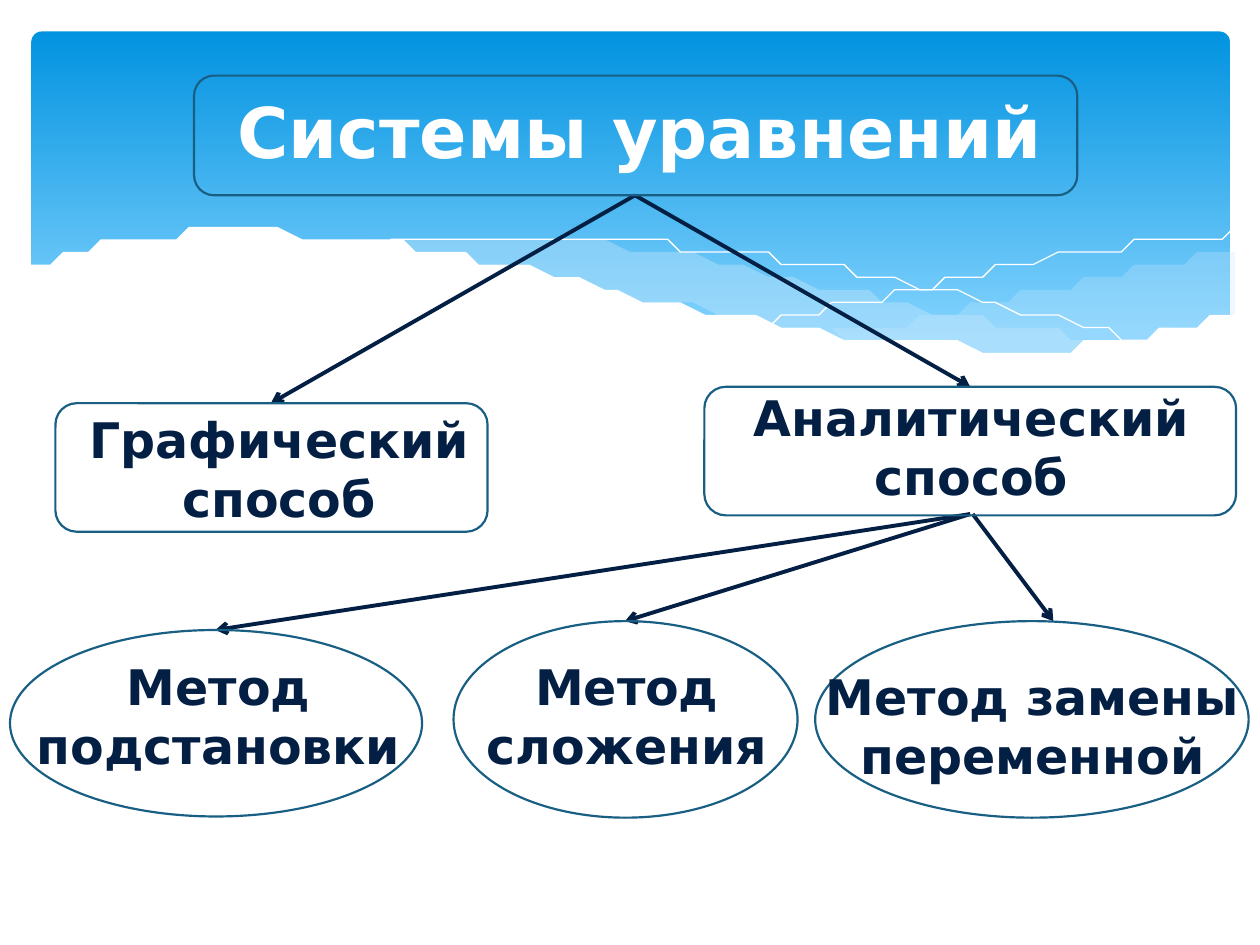
from dataclasses import dataclass

from lxml import etree
from pptx import Presentation
from pptx.dml.color import RGBColor
from pptx.enum.shapes import MSO_CONNECTOR, MSO_SHAPE
from pptx.enum.text import MSO_ANCHOR, MSO_AUTO_SIZE, PP_ALIGN
from pptx.oxml.ns import qn
from pptx.util import Emu, Inches, Pt

ROUNDED, ELLIPSE = MSO_SHAPE.ROUNDED_RECTANGLE, MSO_SHAPE.OVAL
STRAIGHT = MSO_CONNECTOR.STRAIGHT
CENTER, TOP = PP_ALIGN.CENTER, MSO_ANCHOR.TOP
FIT_SHAPE = MSO_AUTO_SIZE.SHAPE_TO_FIT_TEXT

COLORS = {"sky": "0293E0", "light sky": "83D3FE", "veil": "C6E7FC",
          "white": "FFFFFF", "ink": "041F44", "outline": "195F84"}
FONT = "DejaVu Sans"
WIDTH, HEIGHT = Inches(10), Inches(7.5)
COLUMNS, ROWS = 100, 75  # grid of square cells
CELL = WIDTH // COLUMNS

Point = tuple[float, float]
Area = tuple[float, float, float, float]  # column, row, columns, rows


@dataclass
class Node:
    text: str
    kind: MSO_SHAPE
    outline: Area
    label: Area


@dataclass
class Arrow:
    start: Point
    end: Point


@dataclass
class Veil:
    upper: list[Point]
    lower: list[Point]
    color: str
    opacity: int


VEILS = [
    Veil([(66.1, 26.5), (72.9, 25.3), (79.2, 24), (86.1, 22.3), (92.1, 21), (97.6, 20)],
         [(97.6, 24.7), (92.8, 26.3), (87.2, 27.4), (81.4, 27.8), (74.5, 27.5), (66.1, 26.5)],
         "veil", 29),
    Veil([(28.6, 19.1), (34.4, 18.6), (42, 18.7), (51.4, 19.8), (62.9, 22.2), (74.1, 24.7),
          (83.7, 26.5), (89.3, 27.3)],
         [(89.3, 27.3), (83.8, 27.8), (77.3, 27.7), (69.5, 27), (60.1, 25.5), (49.1, 23.2),
          (38.3, 20.7), (28.6, 19.1)], "veil", 40),
    Veil([(2.3, 21.3), (5.2, 20.1), (10.6, 18.9), (17.7, 18.4), (27.1, 18.8), (36.5, 20.2),
          (47.5, 22.7), (57.9, 25), (68.8, 26.8), (79.3, 27.6), (87.5, 27.3),
          (93, 26.2), (97.7, 24.6)],
         [(97.7, 32.9), (2.3, 32.9)], "white", 100),
]
THREADS = [
    [(30.9, 19.5), (36.3, 18.9), (43.3, 18.7), (51, 19.2), (60.8, 20.4), (69.5, 21.9),
     (79.5, 24.1), (90.7, 27.2)],
    [(61.3, 25.7), (69.5, 23.5), (77.6, 21.6), (86.6, 19.9), (92.4, 19), (97.5, 18.5)],
]
TITLE = Node("Системы уравнений ", ROUNDED, (15.4, 6, 70.1, 9.5), (16.9, 6.5, 67.7, 7.7))
NODES = [
    Node("Графический способ", ROUNDED, (4.4, 32, 34.3, 10.2), (5.2, 32, 33.9, 10.4)),
    Node("Аналитический способ", ROUNDED, (55.9, 30.7, 42.2, 10.2), (57.8, 30.3, 38.6, 10.4)),
    Node("Метод подстановки", ELLIPSE, (0.8, 50, 32.7, 14.8), (1.2, 51.6, 32.3, 10.4)),
    Node("Метод сложения", ELLIPSE, (36, 49.3, 27.3, 15.6), (37, 51.6, 25.5, 10.4)),
    Node("Метод замены переменной", ELLIPSE, (64.7, 49.3, 34.4, 15.6), (64.1, 52.4, 35.7, 10.4)),
]
ARROWS = [
    Arrow((50.4, 15.5), (21.5, 32)),
    Arrow((50.4, 15.5), (77, 30.7)),
    Arrow((77, 40.8), (17.1, 50)),
    Arrow((77, 40.8), (49.6, 49.3)),
    Arrow((77.2, 40.8), (83.6, 49.3)),
]


def color(name: str) -> RGBColor:
    return RGBColor.from_string(COLORS[name])


def cells(values) -> list[Emu]:
    return [Emu(round(value * CELL)) for value in values]


def smooth(knots: list[Point], steps: int = 6) -> list[Point]:
    """Catmull-Rom curve through the knots."""
    if len(knots) < 3:
        return knots
    padded = [knots[0], *knots, knots[-1]]
    curve = [knots[0]]
    for a, b, c, d in zip(padded, padded[1:], padded[2:], padded[3:]):
        for step in range(1, steps + 1):
            t = step / steps
            curve.append(tuple(
                (2 * q + (r - p) * t + (2 * p - 5 * q + 4 * r - s) * t ** 2
                 + (3 * q - p - 3 * r + s) * t ** 3) / 2
                for p, q, r, s in zip(a, b, c, d)))
    return curve


def draw_path(shapes, points: list[Point], close: bool):
    builder = shapes.build_freeform(*points[0], scale=CELL)
    builder.add_line_segments(points[1:], close=close)
    shape = builder.convert_to_shape()
    shape.shadow.inherit = False
    return shape


def draw_banner(shapes) -> None:
    shape = shapes.add_shape(ROUNDED, *cells((2.5, 2.5, 95.1, 27)))
    shape.shadow.inherit = False
    shape.adjustments[0] = 0.03
    shape.line.fill.background()
    shape.fill.gradient()
    shape.fill.gradient_angle = 270
    stops = zip(shape.fill.gradient_stops, ("sky", "light sky"), (0, 0.9))
    for stop, name, position in stops:
        stop.color.rgb = color(name)
        stop.position = position


def draw_veil(shapes, veil: Veil) -> None:
    shape = draw_path(shapes, smooth(veil.upper) + smooth(veil.lower), True)
    shape.line.fill.background()
    shape.fill.solid()
    shape.fill.fore_color.rgb = color(veil.color)
    if veil.opacity < 100:
        fill_color = shape._element.spPr.find(qn("a:solidFill"))[0]
        etree.SubElement(fill_color, qn("a:alpha"), val=str(veil.opacity * 1000))


def draw_thread(shapes, knots: list[Point]) -> None:
    shape = draw_path(shapes, smooth(knots), False)
    shape.fill.background()
    shape.line.color.rgb = color("white")
    shape.line.width = Pt(0)


def draw_outline(shapes, node: Node) -> None:
    shape = shapes.add_shape(node.kind, *cells(node.outline))
    shape.shadow.inherit = False
    shape.fill.background()
    shape.line.color.rgb = color("outline")
    shape.line.width = Pt(1.25)


def write_label(shape, node: Node, size: int, color_name: str) -> None:
    shape.left, shape.top, shape.width, shape.height = cells(node.label)
    frame = shape.text_frame
    frame.word_wrap = True
    frame.auto_size = FIT_SHAPE
    frame.vertical_anchor = TOP
    paragraph = frame.paragraphs[0]
    paragraph.alignment = CENTER
    run = paragraph.add_run()
    run.text = node.text
    run.font.name, run.font.size, run.font.bold = FONT, Pt(size), True
    run.font.color.rgb = color(color_name)


def draw_arrow(shapes, arrow: Arrow) -> None:
    connector = shapes.add_connector(STRAIGHT, *cells(arrow.start + arrow.end))
    connector.line.color.rgb = color("ink")
    connector.line.width = Pt(2.25)
    etree.SubElement(connector.line._get_or_add_ln(), qn("a:tailEnd"), type="arrow")
    etree.SubElement(connector._element.spPr, qn("a:effectLst"))


def main() -> None:
    presentation = Presentation()
    presentation.slide_width, presentation.slide_height = WIDTH, HEIGHT
    slide = presentation.slides.add_slide(presentation.slide_layouts[5])
    shapes = slide.shapes

    # Wavy banner
    draw_banner(shapes)
    for veil in VEILS[:2]:
        draw_veil(shapes, veil)
    for thread in THREADS:
        draw_thread(shapes, thread)
    draw_veil(shapes, VEILS[2])

    # Title, brought in front of the banner
    title = shapes.title
    shapes._spTree.append(title._element)
    write_label(title, TITLE, 40, "white")

    # Tree of methods
    for arrow in ARROWS:
        draw_arrow(shapes, arrow)
    draw_outline(shapes, TITLE)
    for node in NODES:
        draw_outline(shapes, node)
        write_label(shapes.add_textbox(*cells(node.label)), node, 28, "ink")

    presentation.save("out.pptx")


if __name__ == "__main__":
    main()
